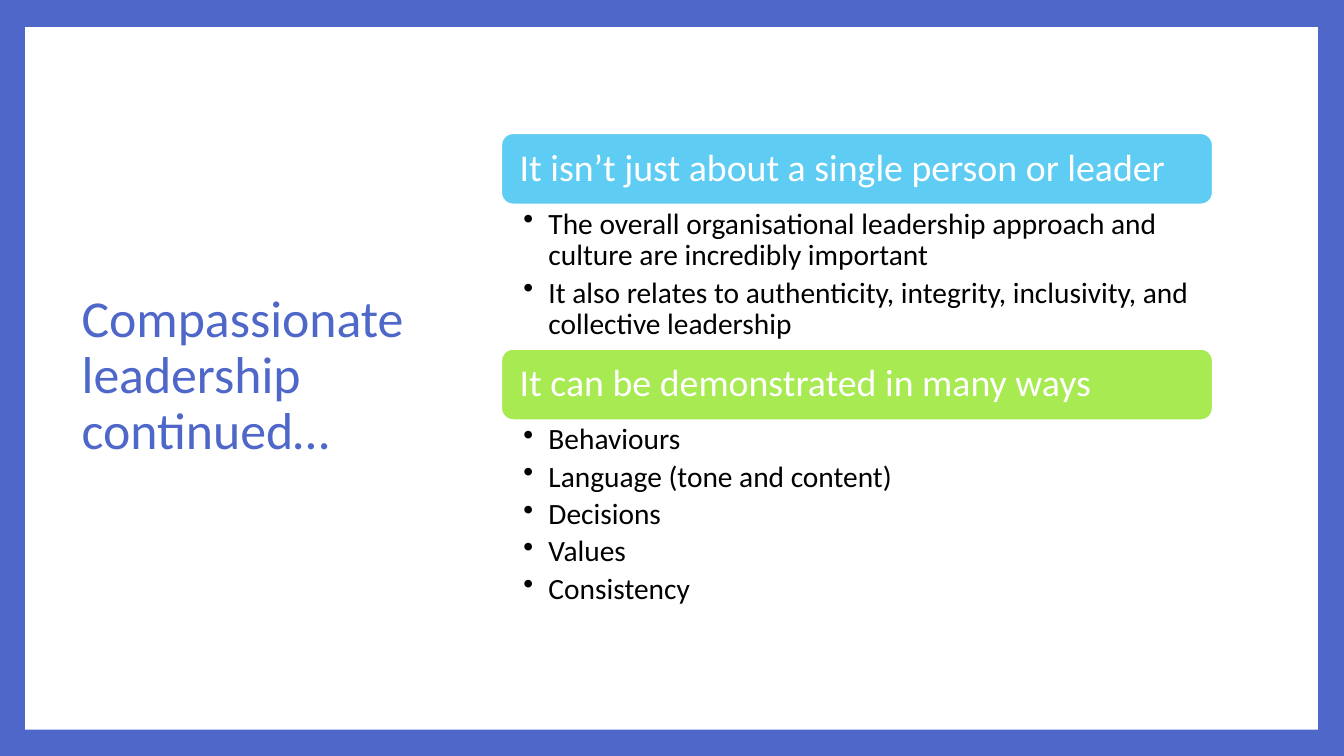
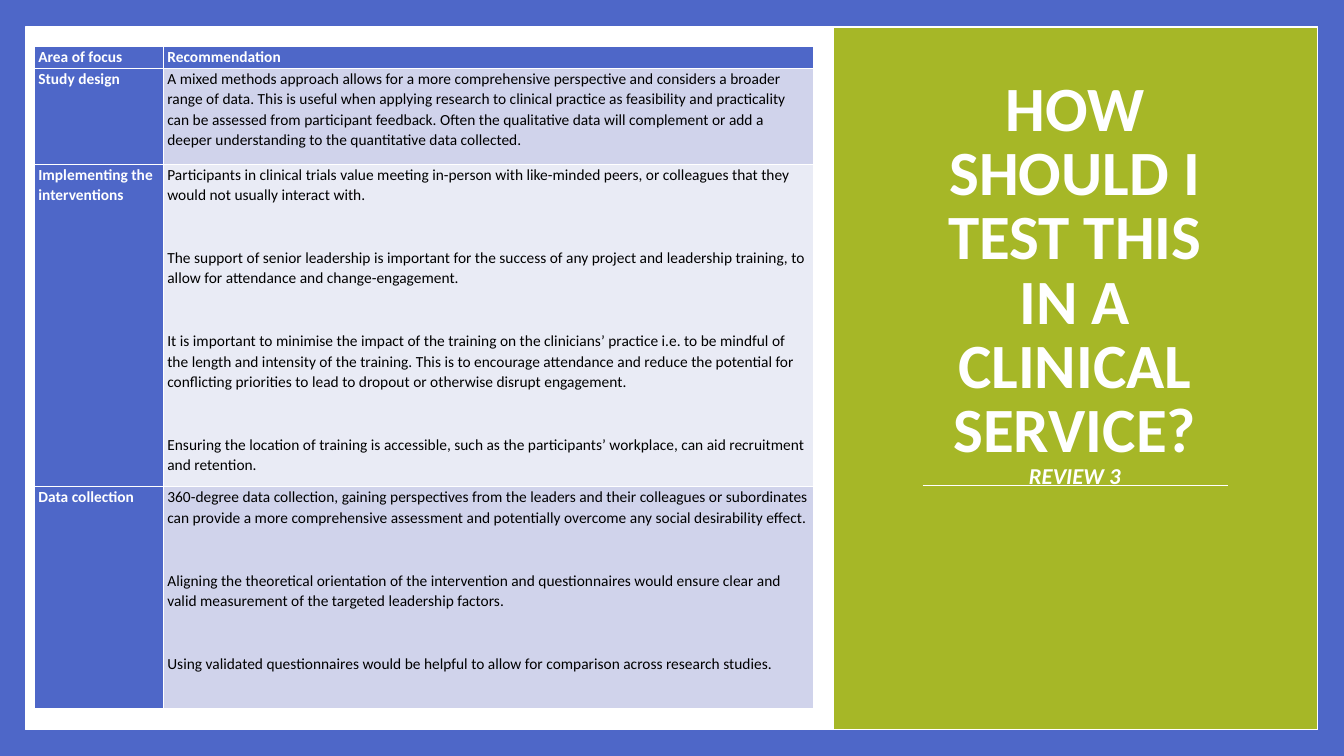
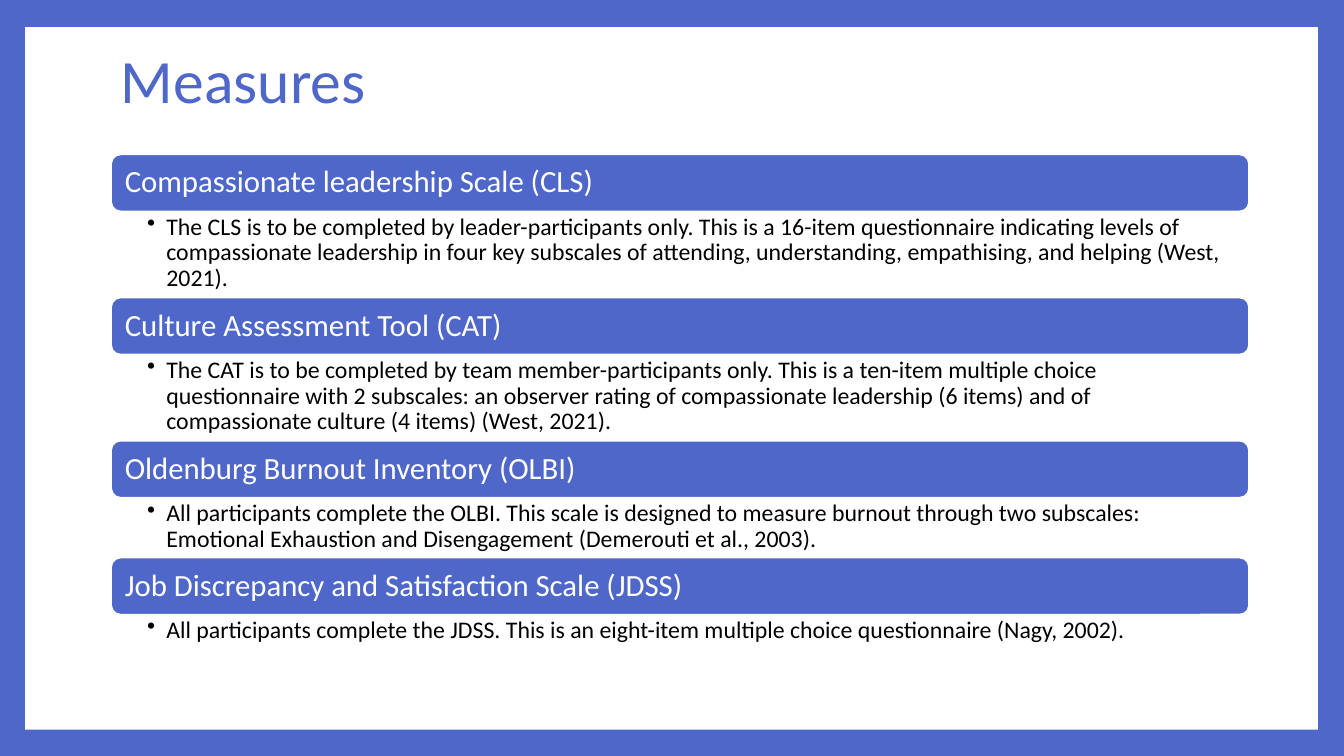
from lxml import etree
from pptx import Presentation
from pptx.dml.color import RGBColor
from pptx.enum import shapes as kinds
from pptx.enum import text as te
from pptx.oxml.ns import qn
from pptx.util import Inches, Pt

FONT = "Calibri"
BLUE, SKY, LIME, OLIVE = "4E67C8", "5ECCF3", "A7EA52", "A6B727"
WHITE, BLACK = "FFFFFF", "000000"
BANDS = ("D0D3EB", "E9EBF5")
PANEL = (0.25, 0.27, 12.82, 6.97)
TITLE_ONLY = 5

LEADERSHIP = [
    ("It isn’t just about a single person or leader", SKY, 1.43, [
        "The overall organisational leadership approach and culture are incredibly important",
        "It also relates to authenticity, integrity, inclusivity, and collective leadership",
    ]),
    ("It can be demonstrated in many ways", LIME, 2.02, [
        "Behaviours", "Language (tone and content)", "Decisions", "Values", "Consistency",
    ]),
]

MEASURES = [
    ("Compassionate leadership Scale (CLS)", BLUE, 0.85, [
        "The CLS is to be completed by leader-participants only. This is a 16-item "
        "questionnaire indicating levels of compassionate leadership in four key subscales "
        "of attending, understanding, empathising, and helping (West, 2021).",
    ]),
    ("Culture Assessment Tool (CAT)", BLUE, 0.85, [
        "The CAT is to be completed by team member-participants only. This is a ten-item "
        "multiple choice questionnaire with 2 subscales: an observer rating of compassionate "
        "leadership (6 items) and of compassionate culture (4 items) (West, 2021).",
    ]),
    ("Oldenburg Burnout Inventory (OLBI)", BLUE, 0.59, [
        "All participants complete the OLBI. This scale is designed to measure burnout through "
        "two subscales: Emotional Exhaustion and Disengagement (Demerouti et al., 2003).",
    ]),
    ("Job Discrepancy and Satisfaction Scale (JDSS)", BLUE, 0.4, [
        "All participants complete the JDSS. This is an eight-item multiple choice "
        "questionnaire (Nagy, 2002).",
    ]),
]

# Each row: height, area of focus, recommendations
RECOMMENDATIONS = [
    (0.22, "Area of focus", ["Recommendation"]),
    (0.95, "Study design", [
        "A mixed methods approach allows for a more comprehensive perspective and considers a "
        "broader range of data. This is useful when applying research to clinical practice as "
        "feasibility and practicality can be assessed from participant feedback. Often the "
        "qualitative data will complement or add a deeper understanding to the quantitative "
        "data collected.",
    ]),
    (3.2, "Implementing the interventions", [
        "Participants in clinical trials value meeting in-person with like-minded peers, or "
        "colleagues that they would not usually interact with.",
        "The support of senior leadership is important for the success of any project and "
        "leadership training, to allow for attendance and change-engagement.",
        "It is important to minimise the impact of the training on the clinicians’ practice "
        "i.e. to be mindful of the length and intensity of the training. This is to encourage "
        "attendance and reduce the potential for conflicting priorities to lead to dropout or "
        "otherwise disrupt engagement.",
        "Ensuring the location of training is accessible, such as the participants’ workplace, "
        "can aid recruitment and retention.",
    ]),
    (2.2, "Data collection", [
        "360-degree data collection, gaining perspectives from the leaders and their colleagues "
        "or subordinates can provide a more comprehensive assessment and potentially overcome "
        "any social desirability effect.",
        "Aligning the theoretical orientation of the intervention and questionnaires would "
        "ensure clear and valid measurement of the targeted leadership factors.",
        "Using validated questionnaires would be helpful to allow for comparison across "
        "research studies.",
    ]),
]


def rgb(hex_colour):
    return RGBColor.from_string(hex_colour)


def inches(box):
    return [Inches(length) for length in box]


def set_font(font, size, colour, bold=False):
    font.name, font.size, font.bold = FONT, Pt(size), bold
    font.color.rgb = rgb(colour)


def set_insets(frame, left, top, right, bottom):
    frame.margin_left, frame.margin_top = Inches(left), Inches(top)
    frame.margin_right, frame.margin_bottom = Inches(right), Inches(bottom)


def add_bullet(paragraph, indent):
    properties = paragraph._p.get_or_add_pPr()
    properties.set("marL", str(Inches(indent)))
    properties.set("indent", str(-Inches(indent)))
    etree.SubElement(properties, qn("a:buChar")).set("char", "•")


def add_block(slide, box, fill=None, line=None, width=1,
              preset=kinds.MSO_SHAPE.RECTANGLE):
    block = slide.shapes.add_shape(preset, *inches(box))
    block.shadow.inherit = False
    if fill:
        block.fill.solid()
        block.fill.fore_color.rgb = rgb(fill)
    else:
        block.fill.background()
    if line:
        block.line.color.rgb = rgb(line)
        block.line.width = Pt(width)
    else:
        block.line.fill.background()
    return block


def set_up_master(master, slide):
    """Give the master its blue frame; the white panel is moved there from the slide."""
    master.background.fill.solid()
    master.background.fill.fore_color.rgb = rgb(BLUE)
    panel = add_block(slide, PANEL, WHITE)._element
    panel.nvSpPr.cNvPr.set("id", "20")
    master.shapes._spTree.insert(2, panel)


def place_title(slide, box, text, size, colour=BLUE, bold=False, spacing=0.9,
                align=te.PP_ALIGN.LEFT, anchor=te.MSO_ANCHOR.MIDDLE):
    title = slide.shapes.title
    title.left, title.top, title.width, title.height = inches(box)
    frame = title.text_frame
    frame.auto_size = te.MSO_AUTO_SIZE.NONE
    frame.vertical_anchor = anchor
    paragraph = frame.paragraphs[0]
    paragraph.alignment, paragraph.line_spacing = align, spacing
    set_font(paragraph.font, size, colour, bold)
    paragraph.add_run().text = text
    return paragraph


def add_sections(slide, left, top, width, sections, bar_height, bar_size, bar_inset,
                 list_size, list_insets, indent):
    """Stack heading bars, each followed by its bulleted list."""
    for heading, colour, list_height, points in sections:
        bar = add_block(slide, (left, top, width, bar_height), colour, WHITE, 1.5,
                        kinds.MSO_SHAPE.ROUNDED_RECTANGLE)
        frame = bar.text_frame
        set_insets(frame, bar_inset, 0, bar_inset, 0)
        frame.vertical_anchor = te.MSO_ANCHOR.MIDDLE
        frame.text = heading
        label = frame.paragraphs[0]
        label.alignment, label.line_spacing = te.PP_ALIGN.LEFT, 0.9
        set_font(label.font, bar_size, WHITE)
        top += bar_height

        details = slide.shapes.add_textbox(*inches((left, top, width, list_height)))
        frame = details.text_frame
        frame.word_wrap = True
        set_insets(frame, *list_insets)
        frame.text = "\n".join(points)
        for point in frame.paragraphs:
            point.line_spacing, point.space_after = 0.9, Pt(4)
            add_bullet(point, indent)
            set_font(point.font, list_size, BLACK)
        top += list_height


def fill_cell(cell, lines, fill, colour, bold):
    cell.fill.solid()
    cell.fill.fore_color.rgb = rgb(fill)
    set_insets(cell, 0.04, 0, 0.04, 0)
    cell.text = "\n".join(lines)
    for number, paragraph in enumerate(cell.text_frame.paragraphs):
        paragraph.line_spacing, paragraph.space_after = 1.07, Pt(8)
        if number:
            paragraph.space_before = Pt(22.4)
        set_font(paragraph.font, 11, colour, bold)


def add_recommendations(slide, box):
    table = slide.shapes.add_table(len(RECOMMENDATIONS), 2, *inches(box)).table
    table.first_col = True
    area_width = 1.28
    table.columns[0].width = Inches(area_width)
    table.columns[1].width = Inches(box[2] - area_width)
    for index, (height, area, advice) in enumerate(RECOMMENDATIONS):
        table.rows[index].height = Inches(height)
        fill_cell(table.cell(index, 0), [area], BLUE, WHITE, True)
        if index == 0:
            fill_cell(table.cell(index, 1), advice, BLUE, WHITE, True)
        else:
            fill_cell(table.cell(index, 1), advice, BANDS[(index - 1) % 2], BLACK, False)


def add_question(slide, box):
    """Green side panel with a rule and the slide's title."""
    left, top, width, height = box
    add_block(slide, box, OLIVE, WHITE)
    rule_y = top + 4.55
    rule = slide.shapes.add_connector(
        kinds.MSO_CONNECTOR.STRAIGHT,
        *inches((left + 0.89, rule_y, left + 3.92, rule_y)))
    rule.line.color.rgb = rgb(WHITE)
    rule.line.width = Pt(0.79)
    etree.SubElement(rule._element.spPr, qn("a:effectLst"))
    add_block(slide, PANEL, line=WHITE)

    title = place_title(slide, (left + 0.7, top + 0.67, 3.4, 3.96),
                        "HOW SHOULD I TEST THIS IN A CLINICAL SERVICE?", 45, WHITE, True,
                        0.85, te.PP_ALIGN.CENTER, te.MSO_ANCHOR.BOTTOM)
    title.add_line_break()
    review = title.add_run()
    review.text = "REVIEW 3"
    review.font.size, review.font.italic = Pt(16.2), True
    slide.shapes._spTree.append(slide.shapes.title._element)


def main():
    prs = Presentation()
    prs.slide_width, prs.slide_height = Inches(13.33), Inches(7.5)
    leadership, testing, measures = [
        prs.slides.add_slide(prs.slide_layouts[TITLE_ONLY]) for _ in range(3)]
    set_up_master(prs.slide_master, leadership)

    place_title(leadership, (0.71, 0.67, 3.68, 6.13),
                "Compassionate leadership continued…", 37)
    add_sections(leadership, 4.97, 1.32, 7.06, LEADERSHIP, bar_height=0.71, bar_size=27,
                 bar_inset=0.15, list_size=21, list_insets=(0.22, 0.04, 0.21, 0.04),
                 indent=0.25)

    add_recommendations(testing, (0.34, 0.46, 7.73, 6.56))
    add_question(testing, (8.26, 0.27, 4.81, 6.97))

    place_title(measures, (1.1, 0.09, 10.8, 1.48), "Measures", 44)
    add_sections(measures, 1.1, 1.53, 11.29, MEASURES, bar_height=0.57, bar_size=22,
                 bar_inset=0.11, list_size=17, list_insets=(0.36, 0.03, 0.17, 0.03),
                 indent=0.19)

    prs.save("out.pptx")


if __name__ == "__main__":
    main()
